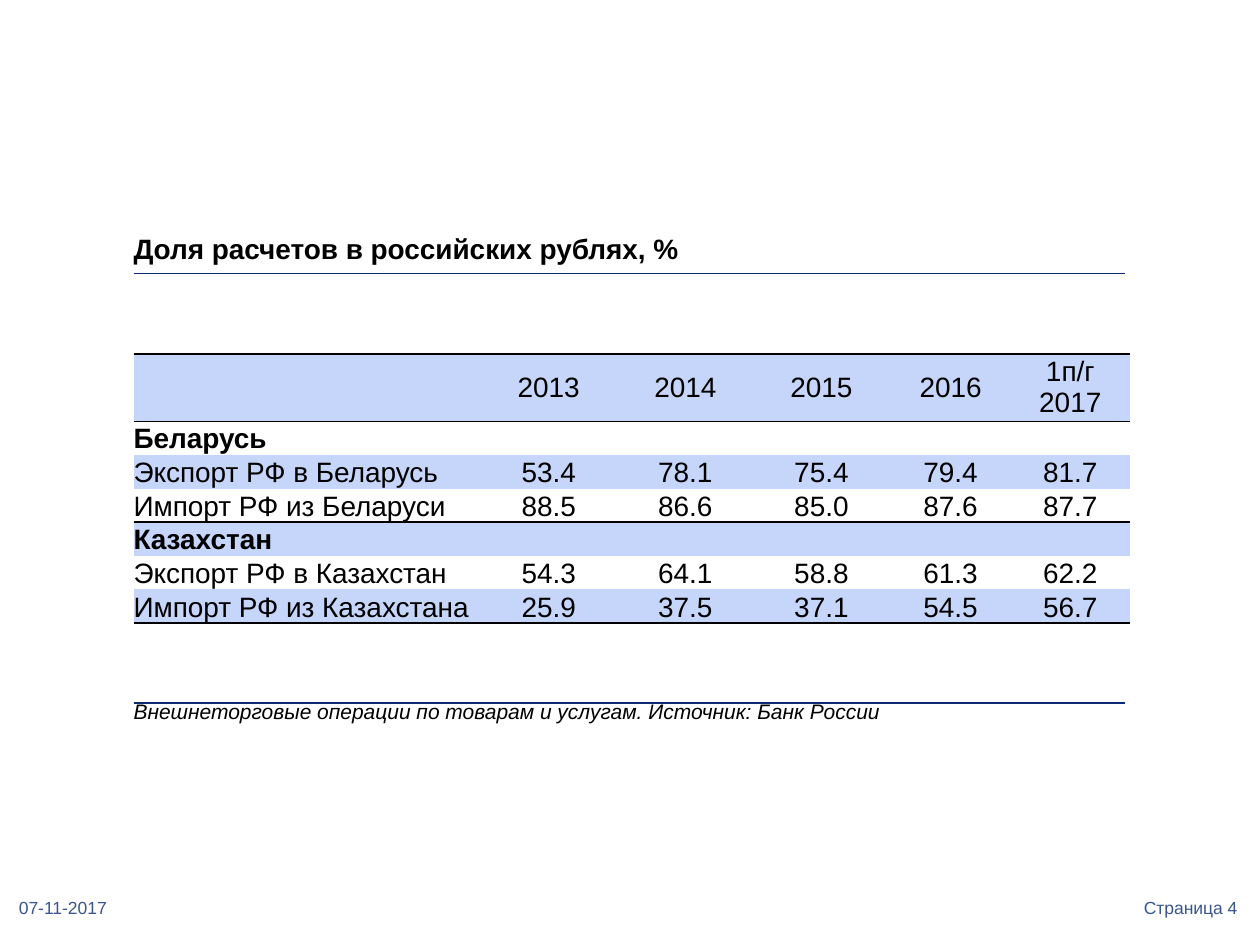
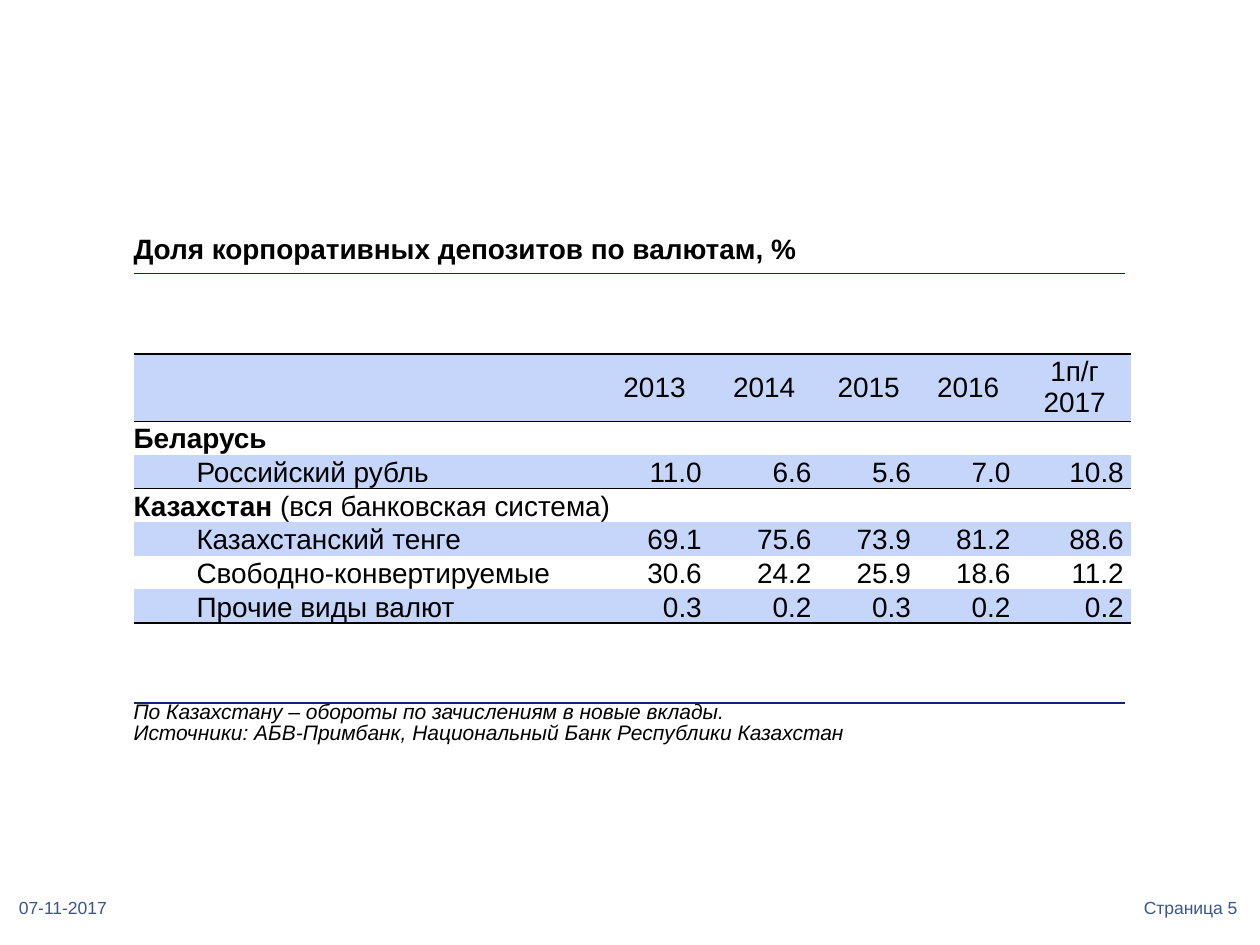
"""Build two slides with tables on rouble settlements and corporate deposits."""
from dataclasses import dataclass

import lxml.etree
import pptx
import pptx.dml.color
import pptx.enum.text
import pptx.oxml.ns
import pptx.util
from pptx.util import Inches

COLORS = {"text": "000000", "rule": "0A2973", "band": "C6D5FA", "footer": "3A558C"}
FONT = "Arial"
PERIODS = ("2013", "2014", "2015", "2016", "1п/г\n2017")
DATE = "07-11-2017"
LEFT = Inches(1.06)
ALIGN = pptx.enum.text.PP_ALIGN
ANCHOR = pptx.enum.text.MSO_ANCHOR


@dataclass
class DataRow:
    label: str
    values: tuple[str, ...] = ()
    note: str = ""

    @property
    def is_section(self) -> bool:
        return not self.values


@dataclass
class TableSlide:
    title: str
    footnote: str
    page: int
    column_widths: tuple[float, ...]
    rows: list[DataRow]
    indent: float = 0
    value_align: ALIGN = ALIGN.CENTER
    value_margin: float = 0


SLIDES = [
    TableSlide(
        "Доля расчетов в российских рублях, %",
        "Внешнеторговые операции по товарам и услугам. Источник: Банк России",
        4,
        (2.74, 1.11, 1.06, 1.1, 0.95, 0.95),
        [
            DataRow("Беларусь"),
            DataRow("Экспорт РФ в Беларусь", ("53.4", "78.1", "75.4", "79.4", "81.7")),
            DataRow("Импорт РФ из Беларуси", ("88.5", "86.6", "85.0", "87.6", "87.7")),
            DataRow("Казахстан"),
            DataRow("Экспорт РФ в Казахстан", ("54.3", "64.1", "58.8", "61.3", "62.2")),
            DataRow("Импорт РФ из Казахстана", ("25.9", "37.5", "37.1", "54.5", "56.7")),
        ],
    ),
    TableSlide(
        "Доля корпоративных депозитов по валютам, %",
        "По Казахстану – обороты по зачислениям в новые вклады.\n"
        "Источники: АБВ-Примбанк, Национальный Банк Республики Казахстан",
        5,
        (3.7, 0.87, 0.87, 0.79, 0.79, 0.9),
        [
            DataRow("Беларусь"),
            DataRow("Российский рубль", ("11.0", "6.6", "5.6", "7.0", "10.8")),
            DataRow("Казахстан", note=" (вся банковская система)"),
            DataRow("Казахстанский тенге", ("69.1", "75.6", "73.9", "81.2", "88.6")),
            DataRow("Свободно-конвертируемые", ("30.6", "24.2", "25.9", "18.6", "11.2")),
            DataRow("Прочие виды валют", ("0.3", "0.2", "0.3", "0.2", "0.2")),
        ],
        indent=0.5,
        value_align=ALIGN.RIGHT,
        value_margin=0.06,
    ),
]


def format_text(text_frame, size: float, color: str = "text", bold: bool = False,
                italic: bool = False, align: ALIGN = ALIGN.LEFT) -> None:
    for paragraph in text_frame.paragraphs:
        paragraph.alignment = align
        for run in paragraph.runs:
            run.font.name = FONT
            run.font.size = pptx.util.Pt(size)
            run.font.bold = bold
            run.font.italic = italic
            run.font.color.rgb = pptx.dml.color.RGBColor.from_string(COLORS[color])
        if not paragraph.runs:
            lxml.etree.SubElement(paragraph._p, pptx.oxml.ns.qn("a:endParaRPr"), sz=str(size * 100))


def style_cell(cell, color: str, top: bool = False, bottom: bool = False, banded: bool = False) -> None:
    qn = pptx.oxml.ns.qn
    cell.margin_left = cell.margin_right = cell.margin_top = cell.margin_bottom = 0
    properties = cell._tc.get_or_add_tcPr()
    for side, visible in (("L", False), ("R", False), ("T", top), ("B", bottom)):
        line = lxml.etree.SubElement(properties, qn(f"a:ln{side}"), w=str(pptx.util.Pt(1)))
        if visible:
            fill = lxml.etree.SubElement(line, qn("a:solidFill"))
            lxml.etree.SubElement(fill, qn("a:srgbClr"), val=COLORS[color])
        else:
            lxml.etree.SubElement(line, qn("a:noFill"))
    if banded:
        cell.fill.solid()
        cell.fill.fore_color.rgb = pptx.dml.color.RGBColor.from_string(COLORS["band"])
    else:
        cell.fill.background()


def add_plain_table(slide, top: float, widths: tuple[float, ...], heights: tuple[float, ...]):
    frame = slide.shapes.add_table(len(heights), len(widths), LEFT, Inches(top),
                                   Inches(sum(widths)), Inches(sum(heights)))
    table = frame.table
    table.first_row = table.horz_banding = False
    for column, width in zip(table.columns, widths):
        column.width = Inches(width)
    for row, height in zip(table.rows, heights):
        row.height = Inches(height)
    return table


def add_title_and_footnote(slide, content: TableSlide) -> None:
    table = add_plain_table(slide, 1.94, (7.87,), (0.23, 3.41, 0.38))
    title, body, footnote = (table.cell(index, 0) for index in range(3))
    style_cell(title, "rule", bottom=True)
    style_cell(body, "rule", top=True, bottom=True)
    style_cell(footnote, "rule", top=True)
    title.text_frame.text = content.title
    footnote.text_frame.paragraphs[0].text = content.footnote
    format_text(title.text_frame, 16, bold=True)
    format_text(footnote.text_frame, 12, italic=True)
    for cell, space_after in ((title, 1), (footnote, 12)):
        paragraph = cell.text_frame.paragraphs[0]
        paragraph.line_spacing = pptx.util.Pt(12)
        paragraph.space_after = pptx.util.Pt(space_after)


def add_data_table(slide, content: TableSlide) -> None:
    rows = [DataRow("", PERIODS), *content.rows]
    table = add_plain_table(slide, 2.81, content.column_widths, (0.2,) * len(rows))
    for row_index, row in enumerate(rows):
        header = row_index == 0
        last = row_index == len(rows) - 1
        texts = (row.label, *(row.values or ("",) * len(PERIODS)))
        for column_index, text in enumerate(texts):
            cell = table.cell(row_index, column_index)
            style_cell(cell, "text", top=header or row.is_section,
                       bottom=last or rows[row_index + 1].is_section, banded=row_index % 2 == 0)
            cell.vertical_anchor = ANCHOR.MIDDLE if header else ANCHOR.BOTTOM
            cell.text_frame.text = text
            align = ALIGN.LEFT
            if header:
                align = ALIGN.CENTER
            elif column_index:
                align = content.value_align
                cell.margin_right = Inches(content.value_margin)
            elif not row.is_section:
                cell.margin_left = Inches(content.indent)
            format_text(cell.text_frame, 16, bold=row.is_section, align=align)
        if row.note:
            label_cell = table.cell(row_index, 0)
            label_cell.merge(table.cell(row_index, len(PERIODS)))
            paragraph = label_cell.text_frame.paragraphs[0]
            paragraph.add_run().text = row.note
            format_text(label_cell.text_frame, 16)
            paragraph.runs[0].font.bold = True


def add_footer(slide, text: str, left: float, width: float, align: ALIGN) -> None:
    shape = slide.shapes.add_textbox(Inches(left), Inches(7.06), Inches(width), Inches(0.29))
    text_frame = shape.text_frame
    text_frame.word_wrap = True
    text_frame.vertical_anchor = ANCHOR.MIDDLE
    text_frame.margin_left = text_frame.margin_right = 0
    text_frame.text = text
    format_text(text_frame, 10, "footer", align=align)


def main() -> None:
    presentation = pptx.Presentation()
    presentation.slide_width = Inches(10)
    presentation.slide_height = Inches(7.5)
    for content in SLIDES:
        slide = presentation.slides.add_slide(presentation.slide_layouts[6])
        add_title_and_footnote(slide, content)
        add_footer(slide, DATE, 0.15, 1.34, ALIGN.LEFT)
        add_footer(slide, f"Страница {content.page}", 8.7, 1.12, ALIGN.RIGHT)
        add_data_table(slide, content)
    presentation.save("out.pptx")


if __name__ == "__main__":
    main()
